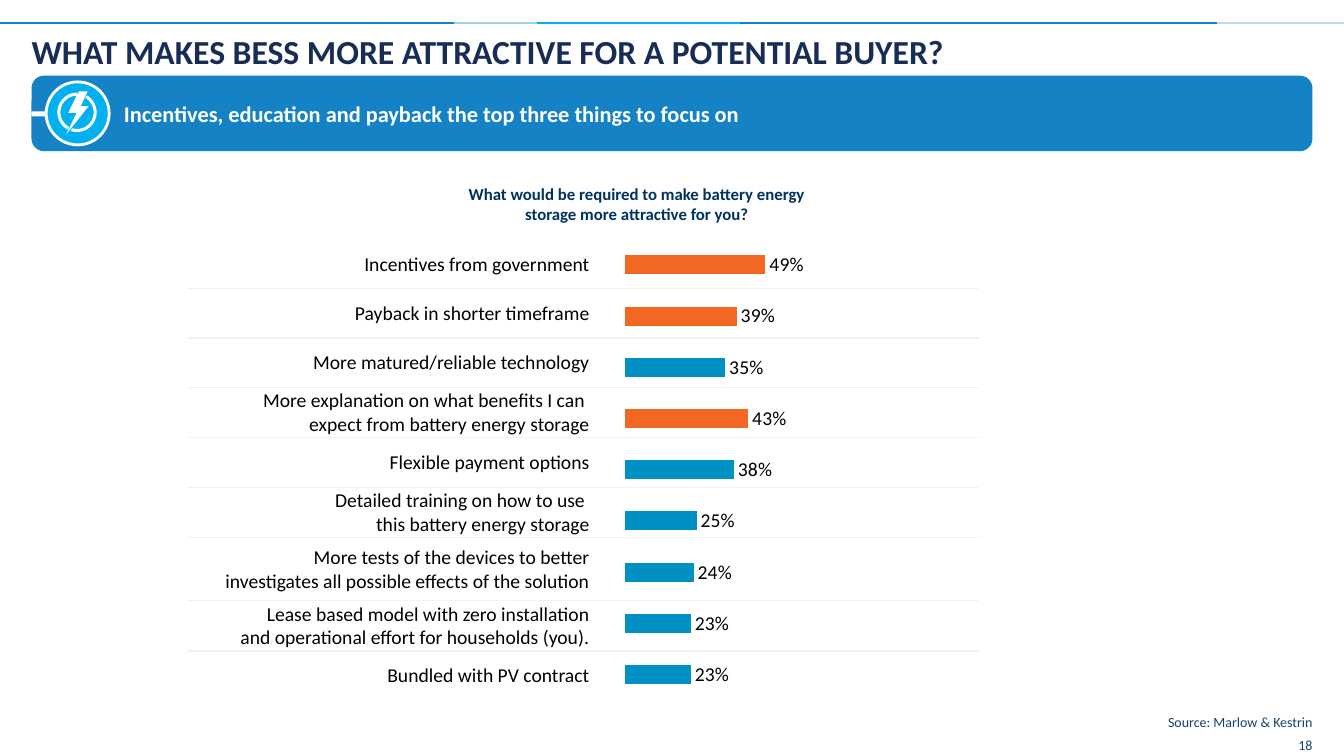
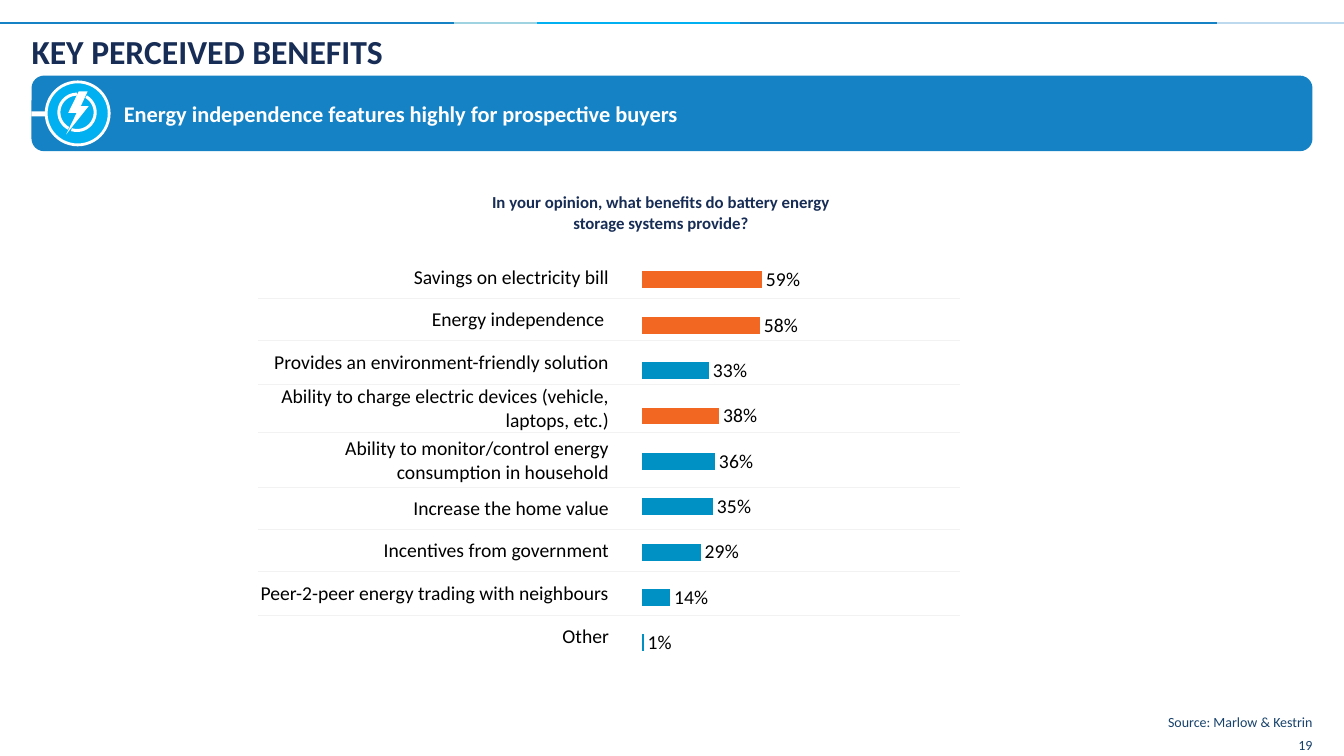
from itertools import pairwise
from math import cos, radians, sin

from lxml import etree
from pptx import Presentation
from pptx.chart.data import CategoryChartData
from pptx.dml.color import RGBColor
from pptx.enum.chart import XL_CHART_TYPE as CHART, XL_LABEL_POSITION as LABEL
from pptx.enum.shapes import MSO_CONNECTOR as LINK, MSO_SHAPE as SHAPE
from pptx.enum.text import MSO_ANCHOR as ANCHOR, PP_ALIGN as ALIGN
from pptx.oxml import parse_xml
from pptx.oxml.ns import nsdecls, qn
from pptx.util import Inches, Pt

FONT = "Calibri"
NAVY, SLATE, BLUE, CYAN = "172D55", "17426B", "1582C5", "00B0F0"
BAR, HIGHLIGHT, RULE, WHITE, BLACK = "0091C4", "F26722", "F2F2F2", "FFFFFF", "000000"
NO_GRID_STYLE = "{2D5ABB26-0587-4C30-8999-92F81FD0307C}"

rgb = RGBColor.from_string

prs = Presentation()
prs.slide_width, prs.slide_height = Inches(13.3333), Inches(7.5)
# Every length counts cells of a square grid, 1280 columns by 720 rows
U = prs.slide_height // 720
MARGIN, WIDTH = 30, 1220


def grid(*cells):
    """Turn grid cells into slide lengths."""
    return [round(c * U) for c in cells]


def write(tf, text, size=14, color=BLACK, bold=False, align=ALIGN.LEFT, spacing=None):
    tf.word_wrap = True
    for i, line in enumerate(text.split("\n")):
        p = tf.add_paragraph() if i else tf.paragraphs[0]
        p.alignment, p.line_spacing = align, spacing
        r = p.add_run()
        r.text = line
        r.font.name, r.font.size, r.font.bold = FONT, Pt(size), bold
        r.font.color.rgb = rgb(color)


top_stops = [0, 432, 511, 705, 1159, 1280]
top_colors = [BLUE, "9FD3E1", CYAN, BLUE, "BCD9EE"]

# Icon outlines: two arcs of a ring, then the lightning bolt
ring_x, ring_y, outer, inner = 73.4, 107, 18.7, 15.8
outlines = []
for start, end in [(118, 270), (-60, 108)]:
    angles = [radians(a) for a in range(start, end + 1, 4)]
    arc = [(outer, a) for a in angles] + [(inner, a) for a in reversed(angles)]
    outlines.append([(ring_x + d * cos(a), ring_y + d * sin(a)) for d, a in arc])
outlines.append([(75, 87), (83.5, 87), (77, 101), (84.5, 101),
                 (63, 128), (73, 107.5), (65, 107.5)])

slides = [
    dict(
        number="18",
        title="WHAT MAKES BESS MORE ATTRACTIVE FOR A POTENTIAL BUYER?",
        message="Incentives, education and payback the top three things to focus on",
        question="What would be required to make battery energy storage more attractive for you?",
        question_at=(425, 175), question_color="003260",
        table_at=(178.5, 228), cols=(384, 370),
        chart_box=(592, 228, 304, 439), plot_left=0.01,
        rows=[
            (47, "Incentives from government", 0.49),
            (47, "Payback in shorter timeframe", 0.39),
            (47, "More matured/reliable technology", 0.35),
            (48, "More explanation on what benefits I can \nexpect from battery energy storage", 0.43),
            (47, "Flexible payment options", 0.38),
            (48, "Detailed training on how to use \nthis battery energy storage", 0.25),
            (60, "More tests of the devices to better\n"
                 "investigates all possible effects of the solution", 0.24),
            (48, "Lease based model with zero installation\n"
                 "and operational effort for households (you).", 0.23),
            (47, "Bundled with PV contract", 0.23),
        ],
    ),
    dict(
        number="19",
        title="KEY PERCEIVED BENEFITS",
        message="Energy independence features highly for prospective buyers",
        question="In your opinion, what benefits do battery energy storage systems provide?",
        question_at=(448, 183), question_color=NAVY,
        table_at=(246, 244), cols=(335, 333),
        chart_box=(611, 245, 216, 389), plot_left=0,
        rows=[
            (40, "Savings on electricity bill", 0.59),
            (40, "Energy independence ", 0.58),
            (42, "Provides an environment-friendly solution", 0.33),
            (46, "Ability to charge electric devices (vehicle, laptops, etc.)", 0.38),
            (52, "Ability to monitor/control energy consumption in household", 0.36),
            (40, "Increase the home value", 0.35),
            (40, "Incentives from government", 0.29),
            (42, "Peer-2-peer energy trading with neighbours", 0.14),
            (40, "Other", 0.01),
        ],
    ),
]

for page in slides:
    s = prs.slides.add_slide(prs.slide_layouts[6])

    # Coloured line along the top
    for (x1, x2), color in zip(pairwise(top_stops), top_colors):
        line = s.shapes.add_connector(LINK.STRAIGHT, *grid(x1, 22, x2, 22))
        line.line.color.rgb, line.line.width = rgb(color), Pt(1.5)
        etree.SubElement(line._element.spPr, qn("a:effectLst"))

    # Banner with its icon
    banner = s.shapes.add_shape(SHAPE.ROUNDED_RECTANGLE, *grid(MARGIN, 72, WIDTH, 72))
    icon = s.shapes.add_group_shape().shapes
    stub = icon.add_shape(SHAPE.RECTANGLE, *grid(MARGIN, 106, 14, 5))
    disc = icon.add_shape(SHAPE.OVAL, *grid(44, 78, 60, 60))
    painted = [(banner, BLUE), (stub, WHITE), (disc, CYAN)]
    for outline in outlines:
        points = [grid(*point) for point in outline]
        pen = icon.build_freeform(*points[0])
        pen.add_line_segments(points[1:], close=True)
        painted.append((pen.convert_to_shape(), WHITE))
    for sp, color in painted:
        sp.shadow.inherit = False
        sp.fill.solid()
        sp.fill.fore_color.rgb = rgb(color)
        sp.line.fill.background()
    disc.line.color.rgb, disc.line.width = rgb(WHITE), Pt(2)

    # Text boxes
    footer = dict(size=10, color=SLATE, align=ALIGN.RIGHT)
    for box, anchor, text, style in [
        ((MARGIN, 29, WIDTH, 38), ANCHOR.TOP, page["title"],
         dict(size=24, color=NAVY, bold=True)),
        ((118, 98, 1118, 23), ANCHOR.MIDDLE, page["message"],
         dict(size=16, color=WHITE, bold=True, spacing=0.9)),
        ((*page["question_at"], 363, 38), ANCHOR.TOP, page["question"],
         dict(size=12, color=page["question_color"], bold=True, align=ALIGN.CENTER)),
        ((1100, 680, 150, 16), ANCHOR.BOTTOM, "Source: Marlow & Kestrin", footer),
        ((1220, 701, 30, 16), ANCHOR.MIDDLE, page["number"], footer),
    ]:
        tf = s.shapes.add_textbox(*grid(*box)).text_frame
        tf.margin_left = tf.margin_right = tf.margin_top = tf.margin_bottom = 0
        tf.vertical_anchor = anchor
        write(tf, text, **style)

    # Answers, ruled between rows
    heights, answers, values = zip(*page["rows"])
    frame = s.shapes.add_table(len(answers), 2, *grid(*page["table_at"], sum(page["cols"]), sum(heights)))
    table = frame.table
    table.first_row = table.horz_banding = False
    table._tbl.tblPr.find(qn("a:tableStyleId")).text = NO_GRID_STYLE
    for column, width in zip(table.columns, grid(*page["cols"])):
        column.width = width
    for row, height, answer in zip(table.rows, grid(*heights), answers):
        row.height = height
        for cell in row.cells:
            cell.margin_left = cell.margin_right = cell.margin_top = U
            cell.margin_bottom = 0
            cell.vertical_anchor = ANCHOR.MIDDLE
            cell.fill.background()
            if answer != answers[-1]:
                cell._tc.get_or_add_tcPr().insert(0, parse_xml(
                    f'<a:lnB {nsdecls("a")} w="{Pt(1)}"><a:solidFill>'
                    f'<a:srgbClr val="{RULE}"/></a:solidFill></a:lnB>'))
        write(row.cells[0].text_frame, answer, align=ALIGN.RIGHT)

    # Bars beside the answers
    data = CategoryChartData(number_format="0%")
    data.categories = [str(n + 1) for n in range(len(values))]
    data.add_series("Series 1", values)
    chart = s.shapes.add_chart(CHART.BAR_CLUSTERED, *grid(*page["chart_box"]), data).chart
    chart.has_legend = chart.has_title = False
    chart.font.name, chart.font.size = FONT, Pt(14)
    chart.font.color.rgb = rgb(BLACK)
    chart.category_axis.visible = chart.value_axis.visible = False
    chart.category_axis.reverse_order = True
    chart.value_axis.has_major_gridlines = False
    chart.value_axis.minimum_scale, chart.value_axis.maximum_scale = 0, 1.1
    plot = chart.plots[0]
    plot.gap_width, plot.vary_by_categories = 170, False
    plot.has_data_labels = True
    labels = plot.data_labels
    labels.show_value, labels.position = True, LABEL.OUTSIDE_END
    labels.number_format, labels.number_format_is_linked = "0%", False
    series = plot.series[0]
    series.format.fill.solid()
    series.format.fill.fore_color.rgb = rgb(BAR)
    for i in (0, 1, 3):
        fill = series.points[i].format.fill
        fill.solid()
        fill.fore_color.rgb = rgb(HIGHLIGHT)

    # Let the plot fill the chart frame
    area = chart._chartSpace.chart.plotArea
    for old in area.findall(qn("c:layout")):
        area.remove(old)
    layout = etree.Element(qn("c:layout"))
    manual = etree.SubElement(layout, qn("c:manualLayout"))
    for tag, val in [("layoutTarget", "inner"), ("xMode", "edge"), ("yMode", "edge"),
                     ("x", page["plot_left"]), ("y", 0), ("w", 0.99), ("h", 1)]:
        etree.SubElement(manual, qn(f"c:{tag}")).set("val", str(val))
    area.insert(0, layout)

prs.save("out.pptx")
